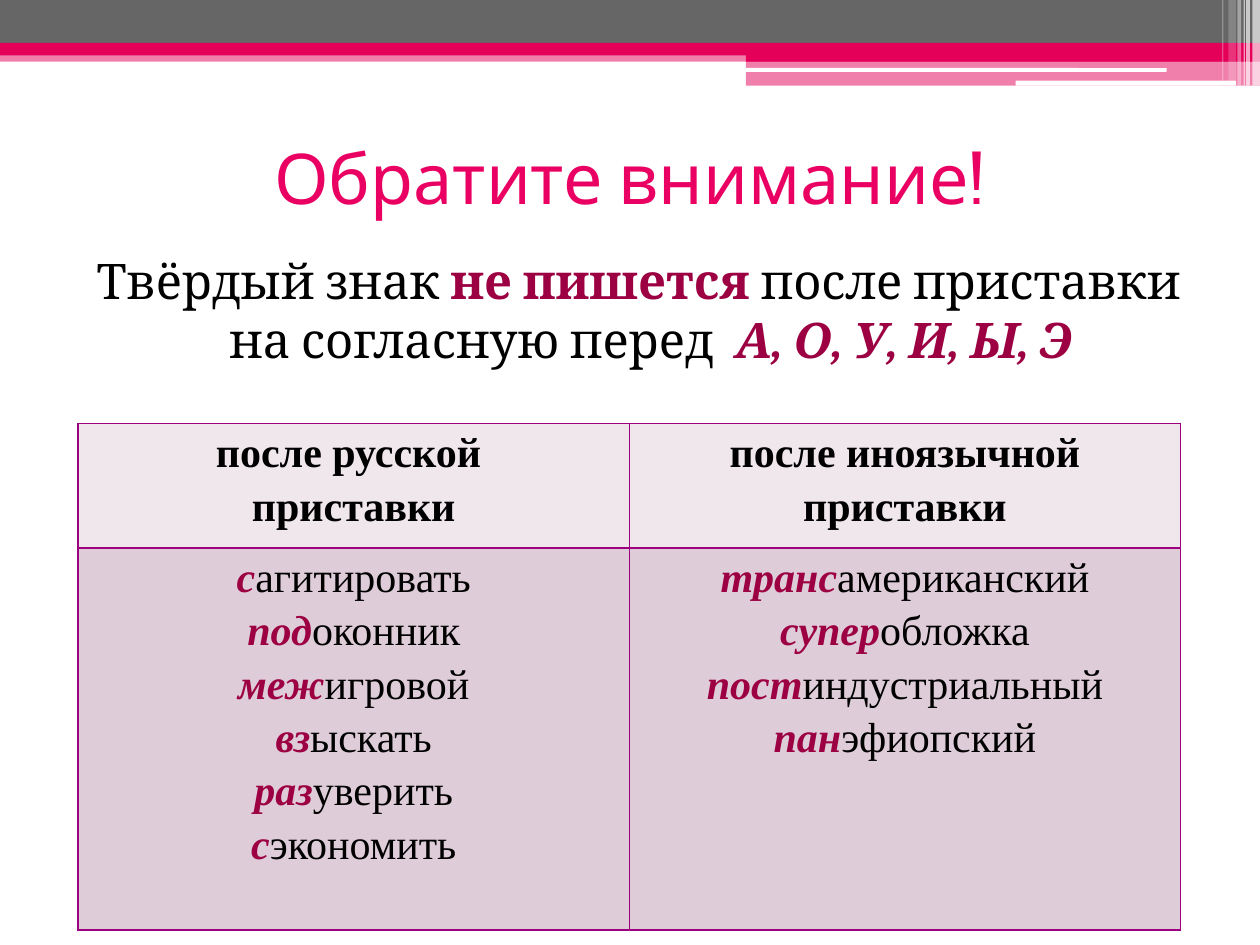
from lxml import etree
from pptx import Presentation
from pptx.dml.color import RGBColor
from pptx.enum.shapes import MSO_SHAPE
from pptx.enum.text import MSO_ANCHOR, PP_ALIGN
from pptx.oxml.ns import qn
from pptx.util import Inches, Pt

RECTANGLE = MSO_SHAPE.RECTANGLE
ROUNDED = MSO_SHAPE.ROUNDED_RECTANGLE
CENTER = PP_ALIGN.CENTER
MIDDLE = MSO_ANCHOR.MIDDLE
TITLE_ONLY = 5

WHITE, BLACK, GRAY = "FFFFFF", "000000", "666666"
PINK, TITLE_PINK, ACCENT = "E40059", "E90062", "9C0042"
BORDER, HEAD_FILL, BODY_FILL = "9C007F", "EFE7EC", "DECCD8"

BANDS = [
    (0, 0.4, 10, 0.09, PINK, 50),
    (0, 0, 10, 0.34, GRAY, 100),
    (0, 0.34, 10, 0.1, PINK, 100),
    (5.92, 0.39, 4.08, 0.1, PINK, 100),
    (5.92, 0.48, 4.08, 0.2, PINK, 50),
]
SLOTS = [(5.91, 0.54, 3.35, 0.03), (8.06, 0.64, 1.75, 0.04)]
STRIPES = [
    (9.94, 0.06, 0.68, 65),
    (9.89, 0.03, 0.68, 65),
    (9.87, 0.01, 0.68, 60),
    (9.82, 0.03, 0.68, 40),
    (9.75, 0.06, 0.64, 20),
    (9.7, 0.01, 0.64, 30),
]
HEADINGS = [["после русской ", "приставки"], ["после иноязычной приставки"]]
EXAMPLES = [
    [("с", "агитировать"), ("под", "оконник"), ("меж", "игровой"),
     ("вз", "ыскать"), ("раз", "уверить"), ("с", "экономить")],
    [("транс", "американский"), ("супер", "обложка"),
     ("пост", "индустриальный"), ("пан", "эфиопский")],
]


def color(value):
    return RGBColor.from_string(value)


def add_span(para, text, font, size, fill, bold=False, italic=False):
    span = para.add_run()
    span.text = text
    span.font.name = font
    span.font.size = Pt(size)
    span.font.bold = bold
    span.font.italic = italic
    span.font.color.rgb = color(fill)


def add_bar(page, kind, box, fill, opacity=100):
    bar = page.shapes.add_shape(kind, *map(Inches, box))
    bar.shadow.inherit = False
    bar.fill.solid()
    bar.fill.fore_color.rgb = color(fill)
    bar.line.fill.background()
    if opacity < 100:
        tint = bar.fill._xPr.find(qn("a:solidFill"))[0]
        etree.SubElement(tint, qn("a:alpha"), val=str(opacity * 1000))


def add_banner(page):
    for *box, fill, opacity in BANDS:
        add_bar(page, RECTANGLE, box, fill, opacity)
    for box in SLOTS:
        add_bar(page, ROUNDED, box, WHITE)
    for left, width, height, opacity in STRIPES:
        add_bar(page, RECTANGLE, (left, 0, width, height), WHITE, opacity)


def add_title(page, box):
    title = page.shapes.title
    title.left, title.top, title.width, title.height = map(Inches, box)
    title.text_frame.vertical_anchor = MIDDLE
    para = title.text_frame.paragraphs[0]
    para.alignment = CENTER
    add_span(para, "Обратите внимание!", "Cabin", 40, TITLE_PINK)


def add_rule(page, box):
    frame = page.shapes.add_textbox(*map(Inches, box)).text_frame
    frame.word_wrap = True
    para = frame.paragraphs[0]
    para.alignment = CENTER
    para.space_before = Pt(3)
    properties = para._p.get_or_add_pPr()
    properties.set("marL", str(Inches(0.4)))
    properties.set("indent", str(Inches(-0.28)))
    for text, fill, bold, italic in [
        ("Твёрдый знак ", BLACK, False, False),
        ("не пишется ", ACCENT, True, False),
        ("после приставки на согласную перед  ", BLACK, False, False),
        ("А, О, У, И, Ы, Э ", ACCENT, True, True),
    ]:
        add_span(para, text, "Cambria", 28, fill, bold, italic)


def style_cell(cell, fill):
    cell.margin_left = cell.margin_right = Inches(0.07)
    cell.margin_top = cell.margin_bottom = 0
    cell.fill.solid()
    cell.fill.fore_color.rgb = color(fill)
    properties = cell._tc.get_or_add_tcPr()
    for index, side in enumerate(("lnL", "lnR", "lnT", "lnB")):
        line = etree.Element(qn(f"a:{side}"), w=str(Pt(1)))
        solid = etree.SubElement(line, qn("a:solidFill"))
        etree.SubElement(solid, qn("a:srgbClr"), val=BORDER)
        properties.insert(index, line)


def fill_cell(cell, fill, lines):
    style_cell(cell, fill)
    frame = cell.text_frame
    for index, spans in enumerate(lines):
        para = frame.add_paragraph() if index else frame.paragraphs[0]
        para.alignment = CENTER
        para.line_spacing = 1.15
        for text, *style in spans:
            add_span(para, text, "Times New Roman", 24, *style)


def add_examples(page, box):
    table = page.shapes.add_table(2, 2, *map(Inches, box)).table
    table.rows[0].height = Inches(0.99)
    table.rows[1].height = Inches(3.03)
    for index, (heading, words) in enumerate(zip(HEADINGS, EXAMPLES)):
        fill_cell(table.cell(0, index), HEAD_FILL,
                  [[(text, BLACK, True)] for text in heading])
        fill_cell(table.cell(1, index), BODY_FILL,
                  [[(prefix, ACCENT, True, True), (stem, BLACK)]
                   for prefix, stem in words])


def main():
    deck = Presentation()
    deck.slide_width, deck.slide_height = Inches(10), Inches(7.5)
    page = deck.slides.add_slide(deck.slide_layouts[TITLE_ONLY])
    add_banner(page)
    add_title(page, (0.5, 0.94, 9, 0.92))
    add_rule(page, (0.51, 1.94, 9, 5.16))
    add_examples(page, (0.62, 3.36, 8.75, 4.02))
    deck.save("out.pptx")


if __name__ == "__main__":
    main()
